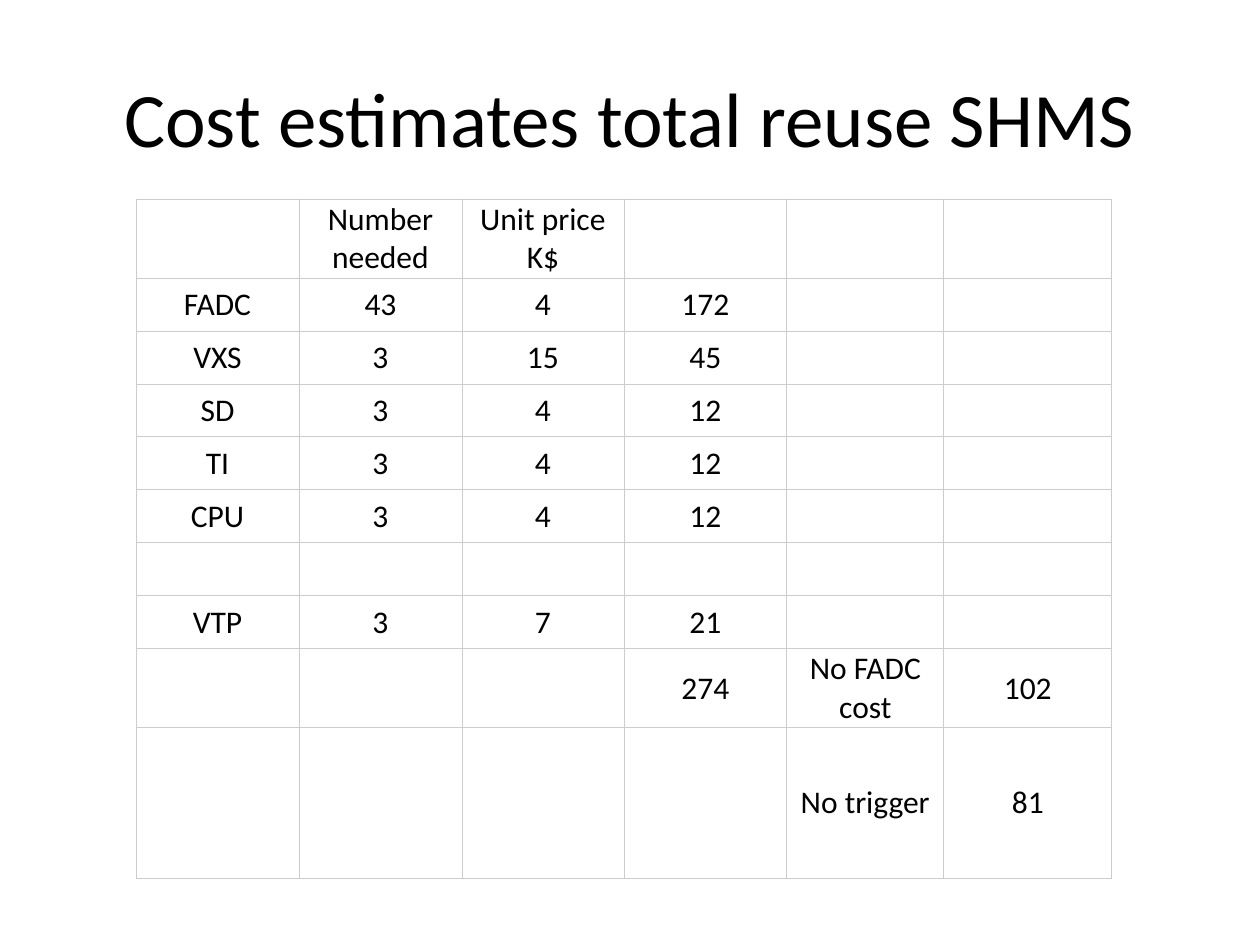
from dataclasses import dataclass

from lxml import etree
from pptx import Presentation
from pptx.dml.color import RGBColor
from pptx.enum.text import MSO_ANCHOR, PP_ALIGN
from pptx.oxml.ns import qn
from pptx.util import Pt

MIDDLE = MSO_ANCHOR.MIDDLE
CENTER = PP_ALIGN.CENTER
TITLE_ONLY = 5
EMU_PER_PX = 914400 / 126
FONT = "Calibri"
BLACK = "000000"
GRID = "CCCCCC"


@dataclass(frozen=True)
class Area:
    left: int
    top: int
    width: int
    height: int


@dataclass(frozen=True)
class CostRow:
    item: str = ""
    number: str = ""
    unit_price: str = ""
    total: str = ""
    note: str = ""
    note_total: str = ""
    height: int = 53

    def texts(self) -> tuple[str, ...]:
        return (self.item, self.number, self.unit_price, self.total, self.note, self.note_total)


TITLE_AREA = Area(63, 38, 1134, 157)
TABLE_AREA = Area(136, 199, 976, 684)
COLUMN_WIDTHS = (163, 163, 162, 163, 157, 168)
COST_ROWS = (
    CostRow(number="Number needed", unit_price="Unit price K$"),
    CostRow("FADC", "43", "4", "172"),
    CostRow("VXS", "3", "15", "45"),
    CostRow("SD", "3", "4", "12"),
    CostRow("TI", "3", "4", "12"),
    CostRow("CPU", "3", "4", "12"),
    CostRow(),
    CostRow("VTP", "3", "7", "21"),
    CostRow(total="274", note="No FADC cost", note_total="102"),
    CostRow(note="No trigger", note_total="81", height=151),
)


def px(length: int) -> int:
    return round(length * EMU_PER_PX)


def color(value: str) -> RGBColor:
    return RGBColor.from_string(value)


def write_text(frame, text: str, *, size: int, fill: str = BLACK, align=CENTER) -> None:
    para = frame.paragraphs[0]
    para.alignment = align
    span = para.add_run()
    span.text = text
    span.font.name = FONT
    span.font.size = Pt(size)
    span.font.bold = False
    span.font.color.rgb = color(fill)


def add_title(page, area: Area, text: str) -> None:
    title = page.shapes.title
    title.left, title.top = px(area.left), px(area.top)
    title.width, title.height = px(area.width), px(area.height)
    title.text_frame.vertical_anchor = MIDDLE
    title.text_frame.word_wrap = True
    write_text(title.text_frame, text, size=44)


def set_borders(cell, line_color: str, width: float) -> None:
    properties = cell._tc.get_or_add_tcPr()
    for index, side in enumerate(("lnL", "lnR", "lnT", "lnB")):
        line = etree.Element(qn(f"a:{side}"), w=str(Pt(width)))
        fill = etree.SubElement(line, qn("a:solidFill"))
        etree.SubElement(fill, qn("a:srgbClr"), val=line_color)
        properties.insert(index, line)


def format_cell(cell, text: str) -> None:
    cell.fill.background()
    cell.vertical_anchor = MIDDLE
    cell.margin_left = cell.margin_right = px(2)
    cell.margin_top = cell.margin_bottom = px(1)
    set_borders(cell, GRID, 0.5)
    if text:
        write_text(cell.text_frame, text, size=18)


def add_cost_table(page, area: Area, rows: tuple[CostRow, ...]) -> None:
    table = page.shapes.add_table(
        len(rows), len(COLUMN_WIDTHS),
        px(area.left), px(area.top), px(area.width), px(area.height),
    ).table
    table.first_row = False
    table.horz_banding = False
    for column, width in zip(table.columns, COLUMN_WIDTHS):
        column.width = px(width)
    for table_row, cost_row in zip(table.rows, rows):
        table_row.height = px(cost_row.height)
        for cell, text in zip(table_row.cells, cost_row.texts()):
            format_cell(cell, text)


def main() -> None:
    deck = Presentation()
    deck.slide_width, deck.slide_height = px(1260), px(945)
    page = deck.slides.add_slide(deck.slide_layouts[TITLE_ONLY])
    add_title(page, TITLE_AREA, "Cost estimates total reuse SHMS")
    add_cost_table(page, TABLE_AREA, COST_ROWS)
    deck.save("out.pptx")


if __name__ == "__main__":
    main()
